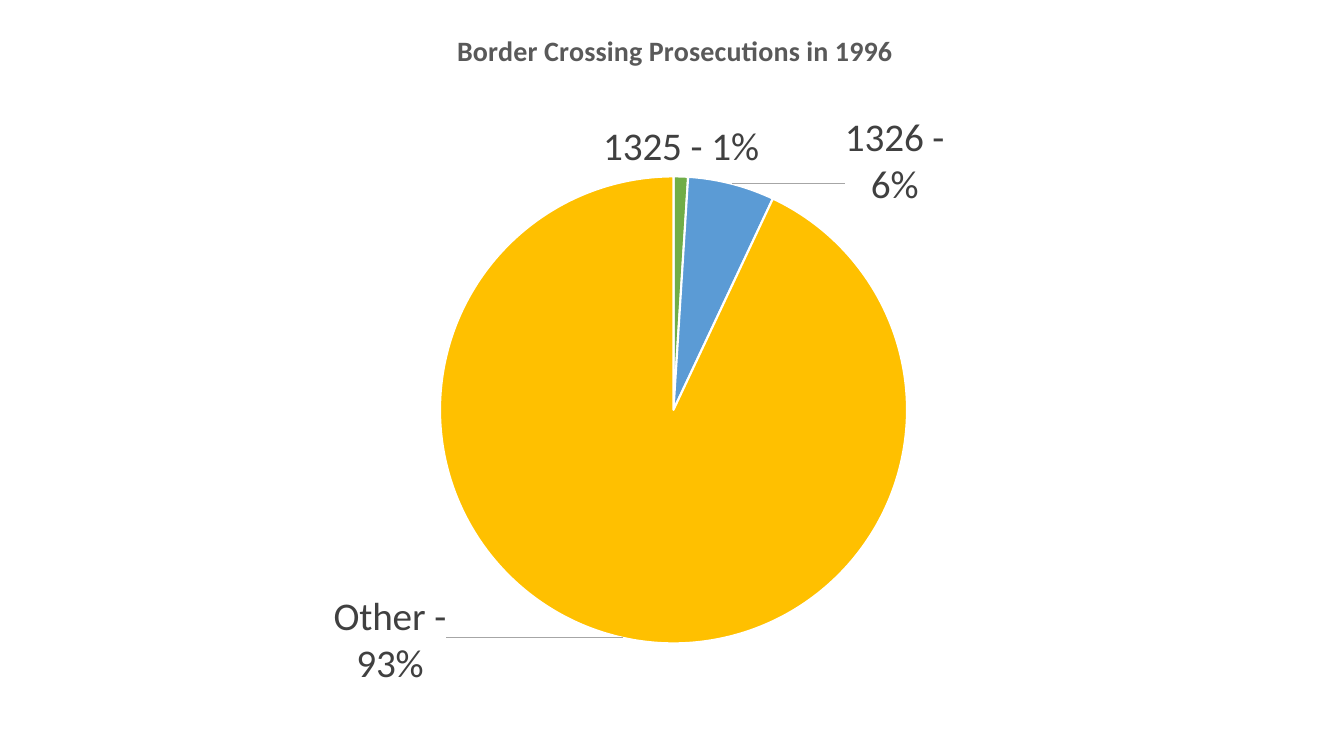
from dataclasses import dataclass

from lxml import etree
from pptx import Presentation
from pptx import util as u
from pptx.chart.data import CategoryChartData
from pptx.dml.color import RGBColor
from pptx.enum import chart as ch
from pptx.oxml import parse_xml
from pptx.oxml.ns import nsdecls, qn

WIDE, HIGH = 1344, 756
SCALE = 914400 / 100.8


@dataclass(frozen=True)
class Theme:
    font: str = "Calibri"
    head: str = "595959"
    text: str = "404040"
    line: str = "A6A6A6"
    edge: str = "FFFFFF"
    head_pt: int = 20
    label_pt: int = 28
    base_pt: int = 10


# value, fill, label, label shift in px
SLICES = [
    (0.01, "70AD47", "1325 - 1%", None),
    (0.06, "5B9BD5", "1326 -\n6%", (112, 31)),
    (0.93, "FFC000", "Other -\n93%", (-175, -50)),
]


def px(n):
    return u.Emu(round(n * SCALE))


def write(frame, words, font, size, color, bold=False):
    """Fill a text frame, one paragraph to a line."""
    for i, line in enumerate(words.split("\n")):
        para = frame.add_paragraph() if i else frame.paragraphs[0]
        run = para.add_run()
        run.text = line
        run.font.name = font
        run.font.size = u.Pt(size)
        run.font.bold = bold
        run.font.color.rgb = RGBColor.from_string(color)


def place(node, at, x, y, w=None, h=None, mode=None, inner=False):
    """Give a chart part a manual layout, as child number at."""
    for old in node.findall(qn("c:layout")):
        node.remove(old)
    lay = parse_xml(f"<c:layout {nsdecls('c')}><c:manualLayout/></c:layout>")
    parts = [("layoutTarget", "inner" if inner else None),
             ("xMode", mode), ("yMode", mode),
             ("x", round(x / WIDE, 4)), ("y", round(y / HIGH, 4)),
             ("w", w and round(w / WIDE, 4)), ("h", h and round(h / HIGH, 4))]
    for name, val in parts:
        if val is not None:
            etree.SubElement(lay[0], qn(f"c:{name}")).set("val", str(val))
    node.insert(at, lay)


class Deck:
    def __init__(self, theme):
        self.theme = theme
        self.show = Presentation()
        self.show.slide_width, self.show.slide_height = px(WIDE), px(HIGH)
        self.slide = self.show.slides.add_slide(self.show.slide_layouts[6])

    def pie(self, x, y, w, h, slices):
        data = CategoryChartData(number_format="0%")
        data.categories = [str(i + 1) for i in range(len(slices))]
        data.add_series("Series 1", [s[0] for s in slices])
        chart = self.slide.shapes.add_chart(
            ch.XL_CHART_TYPE.PIE, px(x), px(y), px(w), px(h), data).chart
        chart.has_legend = False
        chart.font.name = self.theme.font
        chart.font.size = u.Pt(self.theme.base_pt)
        chart.plots[0].vary_by_categories = True
        area = chart._chartSpace.chart.plotArea
        place(area, 0, 440, 176, 467, 468, mode="edge", inner=True)
        series = chart.plots[0].series[0]
        self.leads(series)
        for i, (_, fill, words, shift) in enumerate(slices):
            self.wedge(series.points[i], fill, words, shift)
        return chart

    def leads(self, series):
        """Turn on value labels with thin leader lines."""
        labels = series.data_labels
        labels.show_value = True
        labels.number_format = "0%"
        labels.number_format_is_linked = False
        labels.position = ch.XL_LABEL_POSITION.OUTSIDE_END
        labels.font.name = self.theme.font
        labels.font.size = u.Pt(self.theme.label_pt)
        labels.font.color.rgb = RGBColor.from_string(self.theme.text)
        node = labels._element
        flag = node.find(qn("c:showLeaderLines"))
        if flag is None:
            flag = etree.SubElement(node, qn("c:showLeaderLines"))
        flag.set("val", "1")
        flag.addnext(parse_xml(
            f"<c:leaderLines {nsdecls('c', 'a')}><c:spPr><a:ln w='9525'>"
            f"<a:solidFill><a:srgbClr val='{self.theme.line}'/></a:solidFill>"
            "</a:ln></c:spPr></c:leaderLines>"))

    def wedge(self, point, fill, words, shift):
        look = point.format
        look.fill.solid()
        look.fill.fore_color.rgb = RGBColor.from_string(fill)
        look.line.color.rgb = RGBColor.from_string(self.theme.edge)
        look.line.width = u.Pt(1.5)
        label = point.data_label
        write(label.text_frame, words, font=self.theme.font,
              size=self.theme.label_pt, color=self.theme.text)
        label.position = ch.XL_LABEL_POSITION.OUTSIDE_END
        if shift:
            node = label.text_frame._txBody.getparent().getparent()
            place(node, 1, *shift)

    def title(self, chart, words, x, y):
        chart.has_title = True
        head = chart.chart_title
        write(head.text_frame, words, font=self.theme.font,
              size=self.theme.head_pt, color=self.theme.head, bold=True)
        head.include_in_layout = False
        place(head._element, 1, x, y, mode="edge")

    def save(self):
        self.show.save("out.pptx")


def main():
    deck = Deck(Theme())
    chart = deck.pie(0, 0, WIDE, HIGH, SLICES)
    deck.title(chart, "Border Crossing Prosecutions in 1996", 452, 26)
    deck.save()


if __name__ == "__main__":
    main()
